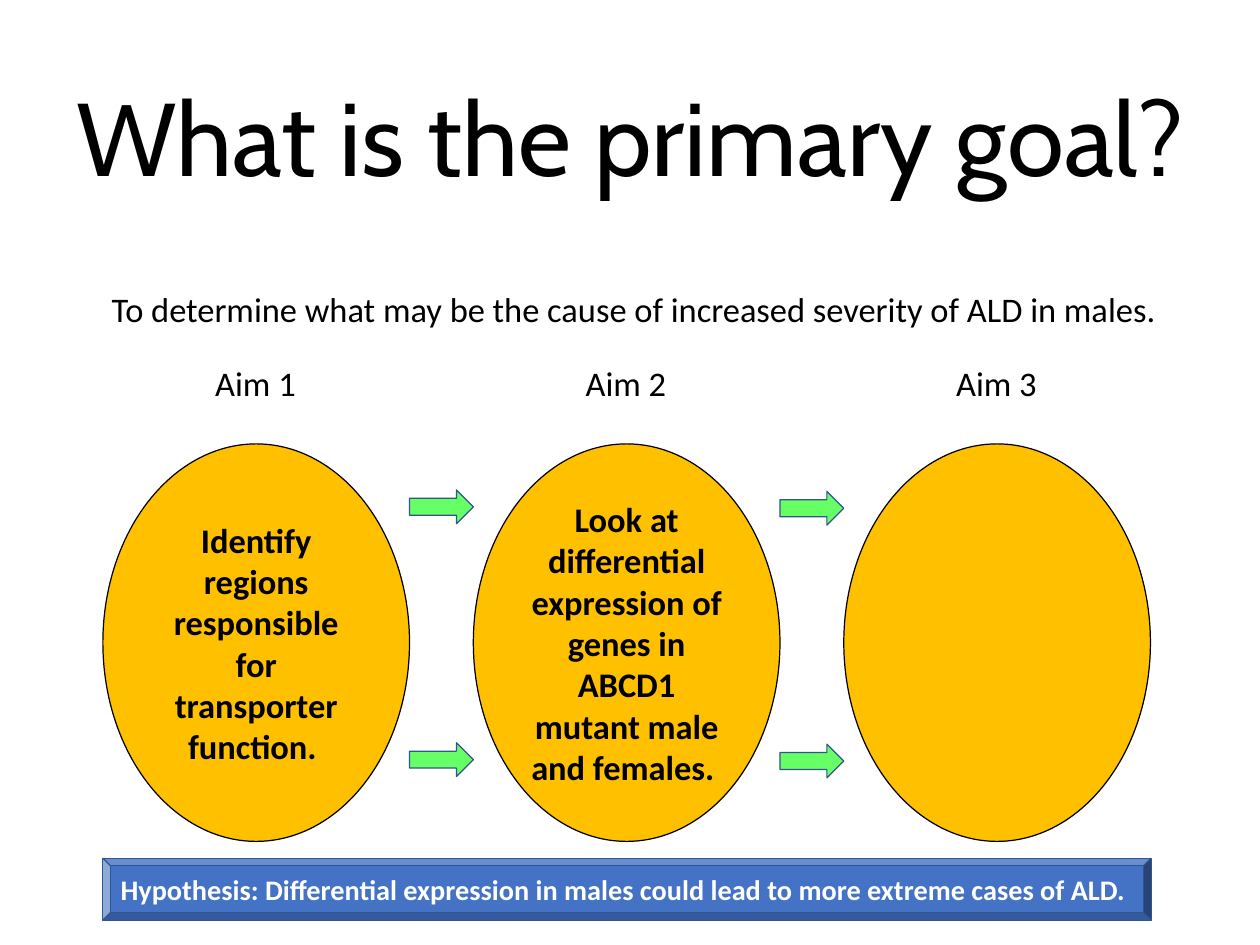
from pptx import Presentation
from pptx.dml.color import RGBColor
from pptx.enum.shapes import MSO_SHAPE as Kind
from pptx.enum.text import MSO_ANCHOR as Anchor, MSO_AUTO_SIZE as Fit, PP_ALIGN as Align
from pptx.util import Cm, Pt

LEFT, OVAL_W, GAP = 2.95, 8.79, 1.83
STEP = OVAL_W + GAP
AIMS = [
    "Identify regions responsible for transporter function. ",
    "Look at differential expression of genes in ABCD1 mutant male and females. ",
    "",
]


def color(code):
    return RGBColor.from_string(code)


def write(shape, text, size=28, font="Calibri", ink="000000", bold=False,
          align=Align.CENTER, anchor=Anchor.MIDDLE, wrap=True, space=1.0):
    frame = shape.text_frame
    frame.auto_size = Fit.NONE
    frame.word_wrap = wrap
    frame.vertical_anchor = anchor
    para = frame.paragraphs[0]
    para.alignment = align
    para.line_spacing = space
    run = para.add_run()
    run.text = text
    run.font.size = Pt(size)
    run.font.name = font
    run.font.bold = bold
    run.font.color.rgb = color(ink)


def place(shape, x, y, w, h):
    shape.left, shape.top, shape.width, shape.height = map(Cm, (x, y, w, h))


def label(slide, text, x, y, w):
    box = slide.shapes.add_textbox(Cm(x), Cm(y), Cm(w), Cm(1.45))
    write(box, text, align=Align.LEFT, anchor=Anchor.TOP, wrap=False)


def draw(slide, kind, x, y, w, h, fill, line):
    shape = slide.shapes.add_shape(kind, Cm(x), Cm(y), Cm(w), Cm(h))
    shape.shadow.inherit = False
    shape.fill.solid()
    shape.fill.fore_color.rgb = color(fill)
    shape.line.color.rgb = color(line)
    shape.line.width = Pt(1)
    return shape


def main():
    deck = Presentation()
    deck.slide_width, deck.slide_height = Cm(36.12), Cm(27.1)
    slide = deck.slides.add_slide(deck.slide_layouts[5])

    title = slide.shapes.title
    place(title, 0, 0.71, 36.12, 6.78)
    write(title, "What is the primary goal?", size=84, font="Cabin", space=0.9)
    label(slide, "To determine what may be the cause of increased severity of ALD in males.",
          LEFT, 8.15, 30.99)

    for i, aim in enumerate(AIMS):
        x = LEFT + i * STEP
        label(slide, f"Aim {i + 1}", x + 2.97, 10.26, 2.84)
        oval = draw(slide, Kind.OVAL, x, 12.73, OVAL_W, 11.4, "FFC000", "000000")
        if aim:
            write(oval, aim, bold=True)

    for i in range(len(AIMS) - 1):
        for y in (14.05, 21.3):
            draw(slide, Kind.RIGHT_ARROW, LEFT + OVAL_W + i * STEP, y + i * 0.04,
                 GAP, 0.97, "66FF66", "325491")

    bar = draw(slide, Kind.BEVEL, LEFT, 24.61, 30.05, 1.78, "4472C4", "325491")
    write(bar, "Hypothesis: Differential expression in males could lead to more extreme cases of ALD. ",
          size=23, ink="FFFFFF", bold=True)

    deck.save("out.pptx")


if __name__ == "__main__":
    main()
